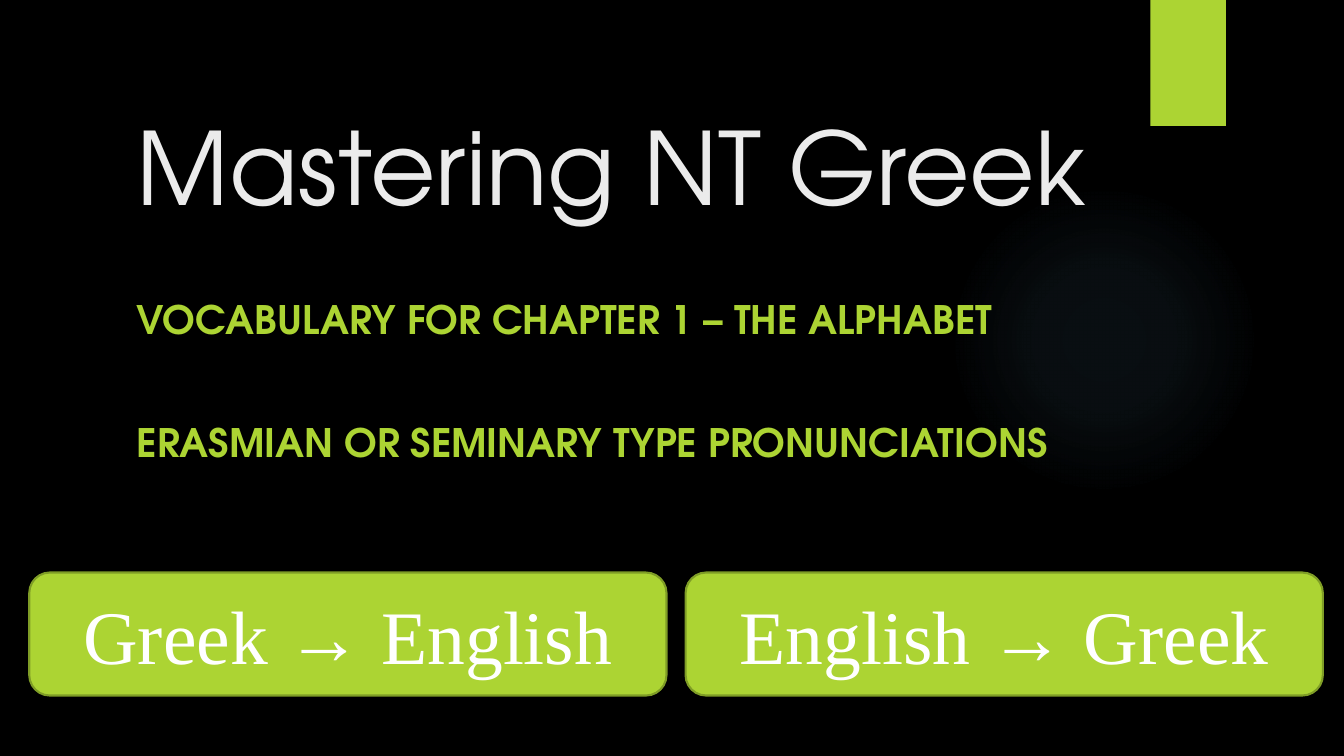
from dataclasses import dataclass

from lxml import etree
from pptx import Presentation
from pptx.dml.color import RGBColor
from pptx.enum.shapes import MSO_SHAPE
from pptx.enum.text import MSO_ANCHOR, PP_ALIGN
from pptx.oxml import parse_xml
from pptx.oxml.ns import nsdecls, qn
from pptx.util import Inches, Pt


@dataclass(frozen=True)
class Theme:
    background: str = "000000"
    accent: str = "ACD433"
    accent_dark: str = "7F9D26"
    title_color: str = "EBEBEB"
    button_text: str = "FFFFFF"
    glow: str = "7AC4F0"
    heading_font: str = "TeX Gyre Adventor"
    button_font: str = "Times New Roman"
    title_size: int = 72
    subtitle_size: int = 28
    button_size: int = 54
    subtitle_gap: int = 54


THEME = Theme()


def color(value):
    return RGBColor.from_string(value)


def add_box_shape(slide, kind, box, fill=None):
    shape = slide.shapes.add_shape(kind, *map(Inches, box))
    shape.shadow.inherit = False
    shape.line.fill.background()
    if fill:
        shape.fill.solid()
        shape.fill.fore_color.rgb = color(fill)
    return shape


def style_runs(paragraph, font_name, size, text_color, bold=False):
    for run in paragraph.runs:
        run.font.name = font_name
        run.font.size = Pt(size)
        run.font.color.rgb = color(text_color)
        run.font.bold = bold


def add_glow(slide, box):
    shape = add_box_shape(slide, MSO_SHAPE.OVAL, box)
    stops = "".join(
        f'<a:gs pos="{position * 1000}"><a:srgbClr val="{THEME.glow}">'
        f'<a:alpha val="{opacity * 1000}"/></a:srgbClr></a:gs>'
        for position, opacity in ((0, 7), (36, 6), (69, 0), (100, 0))
    )
    gradient = parse_xml(
        f'<a:gradFill {nsdecls("a")} rotWithShape="1"><a:gsLst>{stops}</a:gsLst>'
        '<a:path path="circle"><a:fillToRect l="50000" t="50000" r="50000" b="50000"/>'
        "</a:path></a:gradFill>"
    )
    geometry = shape._element.spPr.find(qn("a:prstGeom"))
    geometry.addnext(gradient)


def add_ribbon(slide, box):
    shape = add_box_shape(slide, MSO_SHAPE.RECTANGLE, box, THEME.accent)
    effects = shape._element.spPr.find(qn("a:effectLst"))
    shadow = etree.SubElement(
        effects, qn("a:outerShdw"), blurRad=str(Pt(3)), dist=str(Pt(2)),
        dir="5400000", rotWithShape="0",
    )
    shadow_color = etree.SubElement(shadow, qn("a:srgbClr"), val=THEME.background)
    etree.SubElement(shadow_color, qn("a:alpha"), val="45000")


def add_title(slide, box, text):
    text_frame = slide.shapes.add_textbox(*map(Inches, box)).text_frame
    text_frame.word_wrap = True
    text_frame.vertical_anchor = MSO_ANCHOR.BOTTOM
    text_frame.text = text
    style_runs(text_frame.paragraphs[0], THEME.heading_font, THEME.title_size, THEME.title_color)


def add_subtitle(slide, box, lines):
    text_frame = slide.shapes.add_textbox(*map(Inches, box)).text_frame
    text_frame.word_wrap = True
    text_frame.text = "\n".join(lines)
    for index, paragraph in enumerate(text_frame.paragraphs):
        if index:
            paragraph.space_before = Pt(THEME.subtitle_gap)
        style_runs(paragraph, THEME.heading_font, THEME.subtitle_size, THEME.accent, bold=True)


def add_buttons(slide, box, labels, gap):
    left, top, total_width, height = box
    width = (total_width - gap * (len(labels) - 1)) / len(labels)
    for index, label in enumerate(labels):
        button_box = (left + index * (width + gap), top, width, height)
        shape = add_box_shape(slide, MSO_SHAPE.ROUNDED_RECTANGLE, button_box, THEME.accent)
        shape.line.color.rgb = color(THEME.accent_dark)
        shape.line.width = Pt(1.5)
        text_frame = shape.text_frame
        text_frame.text = label
        text_frame.vertical_anchor = MSO_ANCHOR.MIDDLE
        paragraph = text_frame.paragraphs[0]
        paragraph.alignment = PP_ALIGN.CENTER
        style_runs(paragraph, THEME.button_font, THEME.button_size, THEME.button_text)


def build_title_slide(presentation):
    slide = presentation.slides.add_slide(presentation.slide_layouts[6])
    slide.background.fill.solid()
    slide.background.fill.fore_color.rgb = color(THEME.background)
    add_glow(slide, (9.41, 1.83, 3.08, 3.08))
    add_ribbon(slide, (11.41, 0, 0.75, 1.25))
    add_title(slide, (1.26, 0.7, 10.04, 1.59), "Mastering NT Greek")
    add_subtitle(
        slide,
        (1.26, 2.88, 10.43, 2.69),
        ["VOCABULARY FOR CHAPTER 1 – THE ALPHABET", "ERASMIAN OR SEMINARY TYPE PRONUNCIATIONS"],
    )
    add_buttons(slide, (0.29, 5.68, 12.83, 1.22), ["Greek → English", "English → Greek"], gap=0.19)


def main():
    presentation = Presentation()
    presentation.slide_width = Inches(13.33)
    presentation.slide_height = Inches(7.5)
    build_title_slide(presentation)
    presentation.save("out.pptx")


if __name__ == "__main__":
    main()
